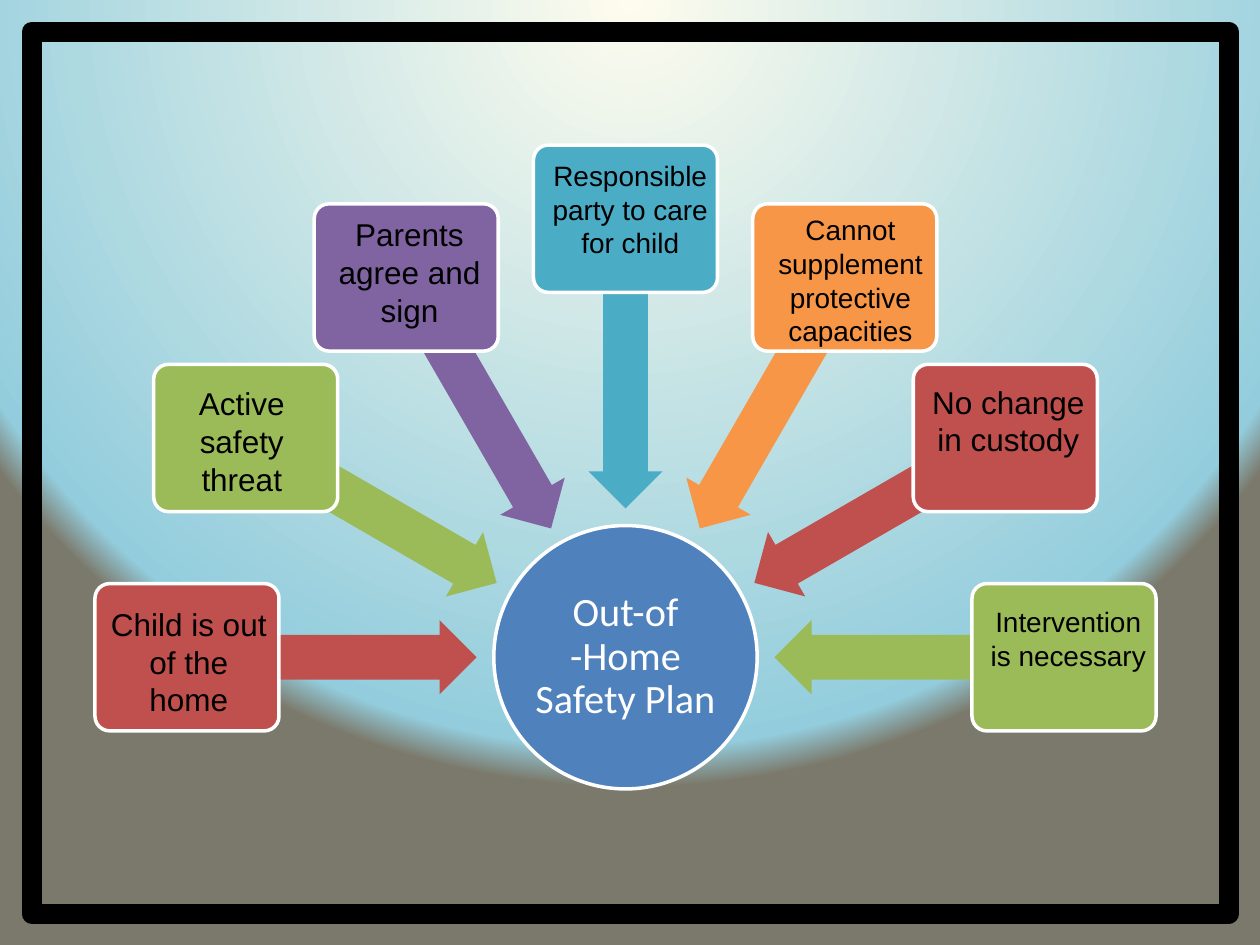
import math
from lxml import etree
from pptx import Presentation
from pptx.dml.color import RGBColor
from pptx.enum import shapes, text
from pptx.oxml import parse_xml
from pptx.oxml.ns import nsdecls, qn
from pptx.util import Cm, Pt

WHITE = RGBColor(0xFF, 0xFF, 0xFF)
BLACK = RGBColor(0x00, 0x00, 0x00)
BLUE = RGBColor(0x4F, 0x81, 0xBD)
RED = RGBColor(0xC0, 0x50, 0x4D)
GREEN = RGBColor(0x9B, 0xBB, 0x59)
PURPLE = RGBColor(0x80, 0x64, 0xA2)
TEAL = RGBColor(0x4B, 0xAC, 0xC6)
ORANGE = RGBColor(0xF7, 0x96, 0x46)
CREAM = RGBColor(0xFE, 0xFC, 0xEE)
SKY = RGBColor(0x93, 0xCD, 0xDD)
TAUPE = RGBColor(0x7B, 0x79, 0x6B)

HUB_X, HUB_Y, HUB_SIZE = 12.61, 13.25, 5.31
BOX_RADIUS, BOX_W, BOX_H = 8.84, 3.71, 2.97
ARROW_RADIUS, ARROW_W, ARROW_H = 5.92, 5.84, 1.5
LABEL_W = 3.81

CRITERIA = [
    ("Child is out of the home", RED, 18, 1.9, 12.07, 2.57),
    ("Active safety threat", GREEN, 18, 2.97, 7.62, 2.57),
    ("Parents agree and sign", PURPLE, 18, 6.35, 4.22, 2.57),
    ("Responsible party to care for child", TEAL, 16, 10.8, 3.07, 2.31),
    ("Cannot supplement protective capacities", ORANGE, 16, 15.24, 4.17, 3),
    ("No change in custody", RED, 18, 18.42, 7.59, 1.8),
    ("Intervention is necessary", GREEN, 16, 19.63, 12.07, 1.63),
]


def set_background(s):
    s.background.fill.solid()
    solid = s.element.find(".//" + qn("p:bgPr")).find(qn("a:solidFill"))
    stops = "".join(
        f'<a:gs pos="{pos * 1000}"><a:srgbClr val="{color}"/></a:gs>'
        for pos, color in ((0, CREAM), (95, SKY), (100, TAUPE))
    )
    gradient = parse_xml(
        f'<a:gradFill {nsdecls("a")} rotWithShape="1"><a:gsLst>{stops}</a:gsLst>'
        '<a:path path="circle"><a:fillToRect l="50000" t="-80000" r="50000" b="180000"/>'
        "</a:path></a:gradFill>"
    )
    solid.getparent().replace(solid, gradient)


def add_centered(parent, kind, x, y, w, h, color, outlined=True):
    sp = parent.shapes.add_shape(kind, Cm(x - w / 2), Cm(y - h / 2), Cm(w), Cm(h))
    sp.shadow.inherit = False
    sp.fill.solid()
    sp.fill.fore_color.rgb = color
    if outlined:
        sp.line.color.rgb = WHITE
        sp.line.width = Pt(2)
    else:
        sp.line.fill.background()
    return sp


def add_label(parent, words, x, y, w, h, size, font="Arial", color=BLACK):
    sp = parent.shapes.add_textbox(Cm(x), Cm(y), Cm(w), Cm(h))
    tf = sp.text_frame
    tf.word_wrap = True
    p = tf.paragraphs[0]
    p.text = words
    p.alignment = text.PP_ALIGN.CENTER
    p.font.size = Pt(size)
    p.font.name = font
    p.font.color.rgb = color
    return tf


def add_hub(group):
    add_centered(group, shapes.MSO_SHAPE.OVAL, HUB_X, HUB_Y, HUB_SIZE, HUB_SIZE, BLUE)
    side = 3.76
    tf = add_label(group, "Out-of -Home Safety Plan", HUB_X - side / 2, HUB_Y - side / 2,
                   side, side, 23, "Calibri", WHITE)
    tf.vertical_anchor = text.MSO_ANCHOR.MIDDLE
    tf.margin_left = tf.margin_right = tf.margin_top = tf.margin_bottom = Cm(0.05)
    tf.paragraphs[0].line_spacing = 0.9


def add_spoke(group, angle, color):
    dx, dy = -math.cos(math.radians(angle)), -math.sin(math.radians(angle))
    arrow = add_centered(group, shapes.MSO_SHAPE.LEFT_ARROW, HUB_X + ARROW_RADIUS * dx,
                         HUB_Y + ARROW_RADIUS * dy, ARROW_W, ARROW_H, color, False)
    arrow.adjustments[0] = 0.6
    arrow.adjustments[1] = 0.5
    arrow.rotation = (180 + angle) % 360
    box = add_centered(group, shapes.MSO_SHAPE.ROUNDED_RECTANGLE, HUB_X + BOX_RADIUS * dx,
                       HUB_Y + BOX_RADIUS * dy, BOX_W, BOX_H, color)
    box.adjustments[0] = 0.1


def add_frame(s):
    sp = s.shapes.add_shape(shapes.MSO_SHAPE.RECTANGLE,
                            Cm(0.64), Cm(0.64), Cm(24.13), Cm(17.78))
    sp.shadow.inherit = False
    sp.fill.background()
    sp.line.color.rgb = BLACK
    sp.line.width = Pt(11.5)
    etree.SubElement(sp.element.spPr.find(qn("a:ln")), qn("a:round"))


def main():
    prs = Presentation()
    prs.slide_width, prs.slide_height = Cm(25.4), Cm(19.05)
    s = prs.slides.add_slide(prs.slide_layouts[6])
    set_background(s)
    group = s.shapes.add_group_shape()
    add_hub(group)
    for i, (_, color, *_) in enumerate(CRITERIA):
        add_spoke(group, 30 * i, color)
    add_frame(s)
    for words, _, size, x, y, h in CRITERIA:
        add_label(s, words, x, y, LABEL_W, h, size)
    prs.save("out.pptx")


if __name__ == "__main__":
    main()
